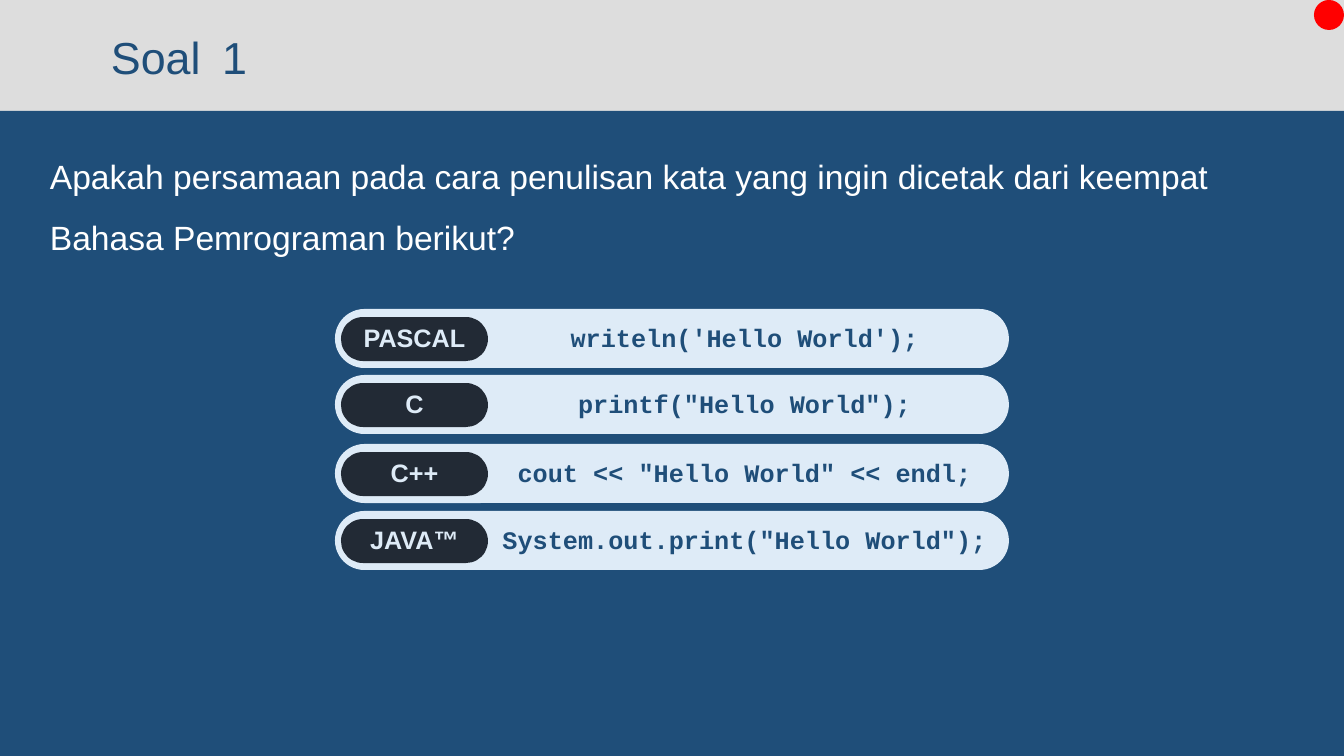
from pptx import Presentation
from pptx.dml.color import RGBColor
from pptx.enum.shapes import MSO_SHAPE
from pptx.enum.text import MSO_ANCHOR, PP_ALIGN
from pptx.util import Emu, Pt

PX = 914400 / 100.8
RECT, OVAL, ROUND = MSO_SHAPE.RECTANGLE, MSO_SHAPE.OVAL, MSO_SHAPE.ROUNDED_RECTANGLE
TOP, MIDDLE = MSO_ANCHOR.TOP, MSO_ANCHOR.MIDDLE
LEFT, CENTER = PP_ALIGN.LEFT, PP_ALIGN.CENTER
COLORS = {
    "grey": "DDDDDD",
    "blue": "1F4E79",
    "pale": "DEEBF7",
    "dark": "222A35",
    "red": "FF0000",
    "white": "FFFFFF",
}


def add_block(kind, box, color):
    sp = s.shapes.add_shape(kind, *[Emu(round(v * PX)) for v in box])
    sp.shadow.inherit = False
    sp.fill.solid()
    sp.fill.fore_color.rgb = RGBColor.from_string(COLORS[color])
    sp.line.fill.background()
    if kind == ROUND:
        sp.adjustments[0] = 0.5
    return sp


def write(sp, text, size, color, font="Arial", bold=False, align=LEFT,
          anchor=MIDDLE, wrap=True, spacing=None):
    tf = sp.text_frame
    tf.word_wrap = wrap
    tf.vertical_anchor = anchor
    p = tf.paragraphs[0]
    p.alignment = align
    p.line_spacing = spacing
    r = p.add_run()
    r.text = text
    r.font.name = font
    r.font.size = Pt(size)
    r.font.bold = bold
    r.font.color.rgb = RGBColor.from_string(COLORS[color])


prs = Presentation()
prs.slide_width = Emu(round(1344 * PX))
prs.slide_height = Emu(round(756 * PX))
s = prs.slides.add_slide(prs.slide_layouts[5])
s.background.fill.solid()
s.background.fill.fore_color.rgb = RGBColor.from_string(COLORS["grey"])

add_block(RECT, (0, 111, 1344, 645), "blue")

title = s.shapes.title
title.left, title.top, title.width, title.height = [
    Emu(round(v * PX)) for v in (212, 20, 101, 74)]
write(title, "1", 32, "blue")

label = s.shapes.add_textbox(*[Emu(round(v * PX)) for v in (101, 20, 111, 74)])
write(label, "Soal", 32, "blue", wrap=False)

question = s.shapes.add_textbox(*[Emu(round(v * PX)) for v in (40, 131, 1260, 151)])
write(question, "Apakah persamaan pada cara penulisan kata yang ingin dicetak "
      "dari keempat Bahasa Pemrograman berikut?", 24, "white", anchor=TOP, spacing=1.5)

add_block(OVAL, (1314, 0, 30, 30), "red")

rows = [
    (309, "PASCAL", "writeln('Hello World');"),
    (375, "C", 'printf("Hello World");'),
    (444, "C++", 'cout << "Hello World" << endl;'),
    (511, "JAVA™", 'System.out.print("Hello World");'),
]
for top, language, code in rows:
    add_block(ROUND, (335, top, 674, 59), "pale")
    pill = add_block(ROUND, (341, top + 8, 147, 44), "dark")
    write(pill, language, 18, "pale", bold=True, align=CENTER, spacing=0.9)
    code_box = s.shapes.add_textbox(
        *[Emu(round(v * PX)) for v in (491, top + 11, 507, 39)])
    write(code_box, code, 18, "blue", "Courier New", True, CENTER, spacing=0.9)

prs.save("out.pptx")
